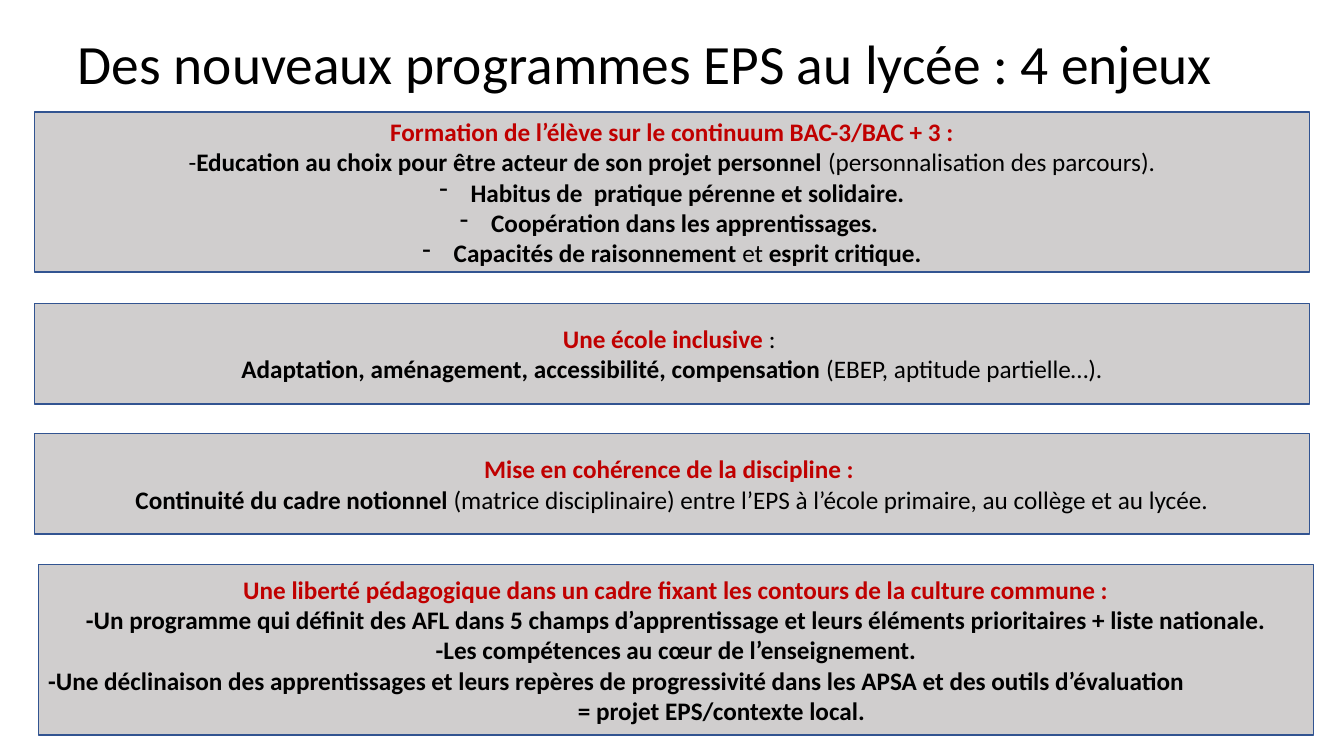
from lxml import etree
from pptx import Presentation
from pptx.dml.color import RGBColor
from pptx.enum.shapes import MSO_SHAPE
from pptx.enum.text import MSO_ANCHOR, PP_ALIGN
from pptx.oxml.ns import qn
from pptx.util import Inches, Pt

RECTANGLE = MSO_SHAPE.RECTANGLE
MIDDLE = MSO_ANCHOR.MIDDLE
CENTER, LEFT = PP_ALIGN.CENTER, PP_ALIGN.LEFT

COLORS = {"text": "000000", "heading": "C00000", "panel": "D0CECE", "border": "325491"}
FONT = "Calibri"
BULLET_INDENT = 0.31
PANEL_WIDTH = 12.65

TITLE = "Des nouveaux programmes EPS au lycée : 4 enjeux"

# A line is (spans, layout options); a span is (text, format options).
HEADING = {"bold": True, "color": "heading"}
BOLD = {"bold": True}
PLAIN = {}
BULLET = {"bullet": "-"}

PANELS = [
    {"left": 0.34, "top": 1.11, "height": 1.59, "lines": [
        ([("Formation de l’élève sur le continuum BAC-3/BAC + 3 :", HEADING)], {}),
        ([("-", PLAIN),
          ("Education au choix pour être acteur de son projet personnel ", BOLD),
          ("(personnalisation des parcours).", PLAIN)], {}),
        ([("Habitus de  pratique pérenne et solidaire.", BOLD)], BULLET),
        ([("Coopération dans les apprentissages. ", BOLD)], BULLET),
        ([("Capacités de raisonnement ", BOLD), ("et ", PLAIN),
          ("esprit critique.", BOLD)], BULLET),
    ]},
    {"left": 0.34, "top": 3.01, "height": 1, "lines": [
        ([("Une école inclusive ", HEADING), (": ", PLAIN)], {}),
        ([("Adaptation, aménagement, accessibilité, compensation ", BOLD),
          ("(EBEP, aptitude partielle…).", PLAIN)], {}),
    ]},
    {"left": 0.34, "top": 4.3, "height": 1, "lines": [
        ([("Mise en cohérence de la discipline : ", HEADING)], {}),
        ([("Continuité du cadre notionnel ", BOLD),
          ("(matrice disciplinaire) entre l’EPS à l’école primaire, "
           "au collège et au lycée.", PLAIN)], {}),
    ]},
    {"left": 0.38, "top": 5.6, "height": 1.69, "lines": [
        ([("Une liberté pédagogique dans un cadre fixant les contours "
           "de la culture commune :", HEADING)], {}),
        ([("-Un programme qui définit des AFL dans 5 champs d’apprentissage "
           "et leurs éléments prioritaires + liste nationale.", BOLD)], {}),
        ([("-Les compétences au cœur de l’enseignement.", BOLD)], {}),
        ([("-Une déclinaison des apprentissages et leurs repères de progressivité "
           "dans les APSA et des outils d’évaluation", BOLD)], {"align": LEFT}),
        ([("= projet EPS/contexte local.", BOLD)], {"indent": 0.9}),
    ]},
]


def add_span(para, text, size=18, bold=False, color="text"):
    span = para.add_run()
    span.text = text
    span.font.name = FONT
    span.font.size = Pt(size)
    span.font.bold = bold
    span.font.color.rgb = RGBColor.from_string(COLORS[color])


def format_line(para, align=CENTER, bullet=None, indent=0):
    para.alignment = align
    properties = para._p.get_or_add_pPr()
    if bullet:
        indent = BULLET_INDENT
        properties.set("indent", str(-Inches(indent)))
        etree.SubElement(properties, qn("a:buFontTx"))
        etree.SubElement(properties, qn("a:buChar")).set("char", bullet)
    if indent:
        properties.set("marL", str(Inches(indent)))


def add_panel(page, left, top, height, lines):
    panel = page.shapes.add_shape(
        RECTANGLE, Inches(left), Inches(top), Inches(PANEL_WIDTH), Inches(height))
    panel.shadow.inherit = False
    panel.fill.solid()
    panel.fill.fore_color.rgb = RGBColor.from_string(COLORS["panel"])
    panel.line.color.rgb = RGBColor.from_string(COLORS["border"])
    panel.line.width = Pt(1)
    frame = panel.text_frame
    frame.word_wrap = True
    frame.vertical_anchor = MIDDLE
    for index, (spans, layout) in enumerate(lines):
        para = frame.add_paragraph() if index else frame.paragraphs[0]
        format_line(para, **layout)
        for text, style in spans:
            add_span(para, text, **style)


def add_title(page):
    box = page.shapes.add_textbox(Inches(0.38), Inches(0.4), Inches(12.04), Inches(0.53))
    frame = box.text_frame
    frame.word_wrap = True
    frame.vertical_anchor = MIDDLE
    para = frame.paragraphs[0]
    para.alignment = CENTER
    para.line_spacing = 0.9
    add_span(para, TITLE, size=39.6)


def main():
    deck = Presentation()
    deck.slide_width, deck.slide_height = Inches(13.33), Inches(7.5)
    page = deck.slides.add_slide(deck.slide_layouts[6])
    add_title(page)
    for panel in PANELS:
        add_panel(page, **panel)
    deck.save("out.pptx")


if __name__ == "__main__":
    main()
